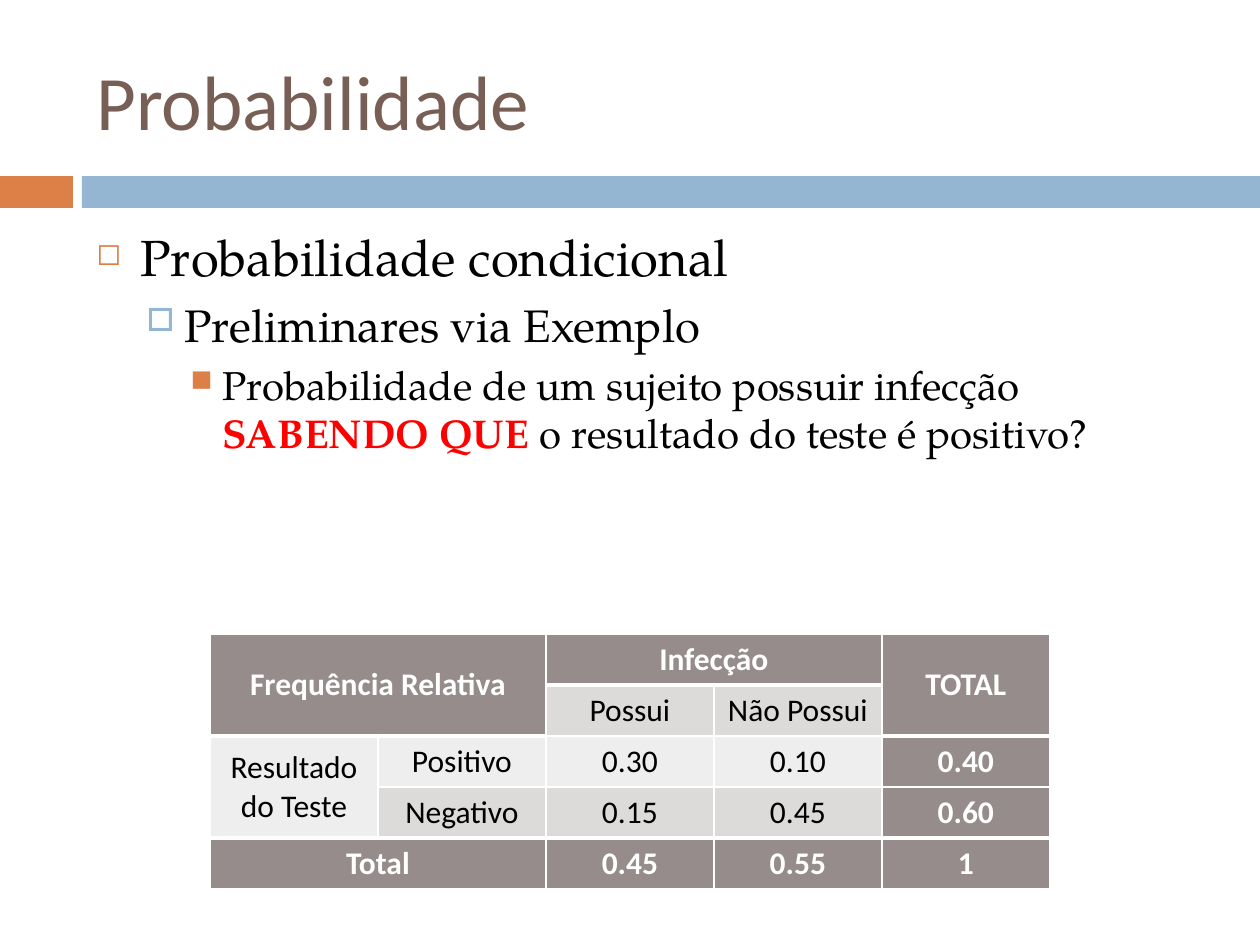
from lxml import etree
from pptx import Presentation, util as u
from pptx.dml.color import RGBColor
from pptx.enum import shapes, text
from pptx.oxml import ns

COLOURS = {
    "orange": "DD8047", "blue": "94B6D2", "brown": "775F55", "black": "000000",
    "red": "FF0000", "white": "FFFFFF",
    "head": "968C8C", "light": "EFEEEE", "dark": "DDDADA",
}
HEADING_FONT, BODY_FONT = "Calibri", "TeX Gyre Pagella"

TITLE = "Probabilidade"
BARS = [("orange", 0, 73), ("blue", 82, 1178)]  # colour, left, width
# runs (text, colour, bold), size, space before, left px, hanging px, bullet, colour, percent
OUTLINE = [
    ([("Probabilidade condicional", "black", False)],
     29, 7, 44, 44, "◻", "orange", 60),
    ([("Preliminares via Exemplo", "black", False)],
     26, 5.5, 88, 38, "□", "blue", 70),
    ([("Probabilidade de um sujeito possuir infecção ", "black", False),
      ("SABENDO QUE", "red", True),
      (" o resultado do teste é positivo?", "black", False)],
     23, 5, 126, 32, "■", "orange", 75),
]
FREQUENCIES = [
    ["Frequência Relativa", "", "Infecção", "", "TOTAL"],
    ["", "", "Possui", "Não Possui", ""],
    ["Resultado do Teste", "Positivo", "0.30", "0.10", "0.40"],
    ["", "Negativo", "0.15", "0.45", "0.60"],
    ["Total", "", "0.45", "0.55", "1"],
]
MERGES = [(0, 0, 1, 1), (0, 2, 0, 3), (0, 4, 1, 4), (2, 0, 3, 0), (4, 0, 4, 1)]
TABLE_LEFT, TABLE_TOP, COLUMN_WIDTH, ROW_HEIGHT = 210, 634, 168, 51


def px(n):
    return u.Emu(round(n * 914400 / 126))


def rgb(name):
    return RGBColor.from_string(COLOURS[name])


def style(run, font, size, colour, bold=False):
    run.font.name, run.font.size, run.font.bold = font, u.Pt(size), bold
    run.font.color.rgb = rgb(colour)


def add_text_frame(slide, left, top, width, height):
    frame = slide.shapes.add_textbox(px(left), px(top), px(width), px(height)).text_frame
    frame.word_wrap = True
    return frame


def add_bullet(paragraph, left, hanging, mark, colour, percent):
    props = paragraph._p.get_or_add_pPr()
    props.set("marL", str(px(left)))
    props.set("indent", str(-px(hanging)))
    bullet_colour = etree.SubElement(props, ns.qn("a:buClr"))
    etree.SubElement(bullet_colour, ns.qn("a:srgbClr"), val=COLOURS[colour])
    etree.SubElement(props, ns.qn("a:buSzPct"), val=str(percent * 1000))
    etree.SubElement(props, ns.qn("a:buChar"), char=mark)


def line_above(row, column):
    """Width in points of the rule above a cell: thick below headings and above the totals."""
    heading_end = 1 if column in (2, 3) else 2
    return 3 if row in (heading_end, 4) else 1


def add_borders(cell, top, bottom):
    props = cell._tc.get_or_add_tcPr()
    for i, (side, width) in enumerate([("L", 1), ("R", 1), ("T", top), ("B", bottom)]):
        line = etree.Element(ns.qn("a:ln" + side), w=str(u.Pt(width)))
        fill = etree.SubElement(line, ns.qn("a:solidFill"))
        etree.SubElement(fill, ns.qn("a:srgbClr"), val=COLOURS["white"])
        props.insert(i, line)


def add_frequency_table(slide):
    rows, columns = len(FREQUENCIES), len(FREQUENCIES[0])
    table = slide.shapes.add_table(
        rows, columns, px(TABLE_LEFT), px(TABLE_TOP),
        px(COLUMN_WIDTH * columns), px(ROW_HEIGHT * rows)).table
    for r1, c1, r2, c2 in MERGES:
        table.cell(r1, c1).merge(table.cell(r2, c2))
    for r, row in enumerate(FREQUENCIES):
        for c, label in enumerate(row):
            cell = table.cell(r, c)
            heading = r in (0, 4) or c == 4 or (r == 1 and c < 2)
            cell.fill.solid()
            cell.fill.fore_color.rgb = rgb("head" if heading else "dark" if r % 2 else "light")
            cell.vertical_anchor = text.MSO_ANCHOR.MIDDLE
            height = cell.span_height if cell.is_merge_origin else 1
            add_borders(cell, line_above(r, c), line_above(r + height, c))
            if label:
                cell.text_frame.text = label
                paragraph = cell.text_frame.paragraphs[0]
                paragraph.alignment = text.PP_ALIGN.CENTER
                style(paragraph.runs[0], HEADING_FONT, 18,
                      "white" if heading else "black", heading)


def main():
    deck = Presentation()
    deck.slide_width, deck.slide_height = px(1260), px(945)
    slide = deck.slides.add_slide(deck.slide_layouts[6])

    for colour, left, width in BARS:
        bar = slide.shapes.add_shape(
            shapes.MSO_SHAPE.RECTANGLE, px(left), px(176), px(width), px(32))
        bar.shadow.inherit = False
        bar.fill.solid()
        bar.fill.fore_color.rgb = rgb(colour)
        bar.line.fill.background()

    title = add_text_frame(slide, 84, 32, 1124, 136)
    title.vertical_anchor = text.MSO_ANCHOR.MIDDLE
    title.text = TITLE
    style(title.paragraphs[0].runs[0], HEADING_FONT, 44, "brown")

    body = add_text_frame(slide, 84, 220, 1124, 659)
    for i, (runs, size, before, *bullet) in enumerate(OUTLINE):
        paragraph = body.add_paragraph() if i else body.paragraphs[0]
        paragraph.level = i
        paragraph.space_before = u.Pt(before)
        add_bullet(paragraph, *bullet)
        for words, colour, bold in runs:
            run = paragraph.add_run()
            run.text = words
            style(run, BODY_FONT, size, colour, bold)

    add_frequency_table(slide)
    deck.save("out.pptx")


if __name__ == "__main__":
    main()
